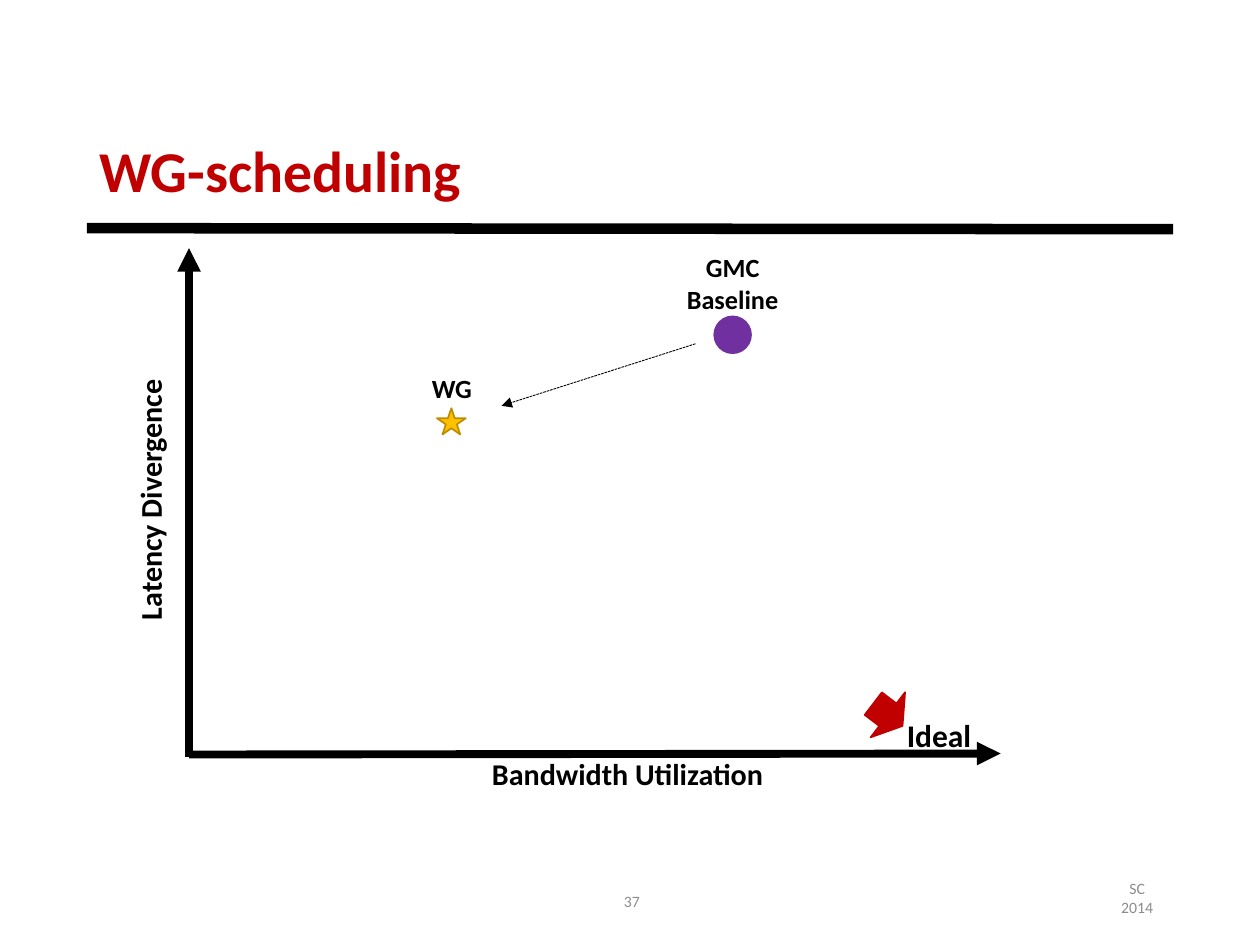
from dataclasses import dataclass

from lxml import etree
from pptx import Presentation
from pptx.dml.color import RGBColor
from pptx.enum.dml import MSO_LINE
from pptx.enum.shapes import MSO_CONNECTOR, MSO_SHAPE
from pptx.enum.text import MSO_ANCHOR, PP_ALIGN
from pptx.oxml.ns import qn
from pptx.util import Cm, Pt

STRAIGHT = MSO_CONNECTOR.STRAIGHT
ARROW, CIRCLE, STAR = MSO_SHAPE.RIGHT_ARROW, MSO_SHAPE.OVAL, MSO_SHAPE.STAR_5_POINT
LEFT, CENTER, RIGHT = PP_ALIGN.LEFT, PP_ALIGN.CENTER, PP_ALIGN.RIGHT
TOP, MIDDLE = MSO_ANCHOR.TOP, MSO_ANCHOR.MIDDLE
DASHED = MSO_LINE.SQUARE_DOT
BLANK_LAYOUT = 6


@dataclass(frozen=True)
class Theme:
    """Font, colours and type sizes of the slide."""
    font: str = "Calibri"
    black: str = "000000"
    red: str = "C00000"
    grey: str = "8C8C8C"
    purple: str = "7030A0"
    gold: str = "FFC000"
    dark_gold: str = "BD8E00"
    title: float = 33
    ideal: float = 18
    axis: float = 17.2
    point: float = 15
    footer: float = 9


THEME = Theme()


def add_text(slide, text, box, size, color=THEME.black, bold=True,
             align=CENTER, anchor=TOP, rotation=0, spacing=1.0):
    """Add a wrapped one-paragraph text box at box, given in centimetres."""
    shape = slide.shapes.add_textbox(*map(Cm, box))
    shape.rotation = rotation
    frame = shape.text_frame
    frame.word_wrap = True
    frame.vertical_anchor = anchor
    paragraph = frame.paragraphs[0]
    paragraph.alignment = align
    paragraph.line_spacing = spacing
    run = paragraph.add_run()
    run.text = text
    run.font.name = THEME.font
    run.font.size = Pt(size)
    run.font.bold = bold
    run.font.color.rgb = RGBColor.from_string(color)


def add_line(slide, start, end, width, arrow=True, dash=None):
    """Add a straight black line, with an arrowhead at its end if wanted."""
    connector = slide.shapes.add_connector(STRAIGHT, *map(Cm, start + end))
    line = connector.line
    line.width = Pt(width)
    line.color.rgb = RGBColor.from_string(THEME.black)
    if dash:
        line.dash_style = dash
    if arrow:
        etree.SubElement(line._get_or_add_ln(), qn("a:tailEnd"), type="triangle")
    etree.SubElement(connector._element.spPr, qn("a:effectLst"))


def add_marker(slide, kind, box, fill, outline, rotation=0):
    """Add a filled and outlined preset shape."""
    shape = slide.shapes.add_shape(kind, *map(Cm, box))
    shape.rotation = rotation
    shape.shadow.inherit = False
    shape.fill.solid()
    shape.fill.fore_color.rgb = RGBColor.from_string(fill)
    shape.line.color.rgb = RGBColor.from_string(outline)
    shape.line.width = Pt(1)


def add_frame(slide):
    """Add the title, its rule and the footer."""
    add_text(slide, "WG-scheduling", (1.75, 2.72, 21.9, 1.57), THEME.title,
             THEME.red, align=LEFT, anchor=MIDDLE, spacing=0.9)
    add_line(slide, (1.75, 4.6), (23.65, 4.62), 6, arrow=False)
    footer = {"color": THEME.grey, "bold": False, "anchor": MIDDLE}
    add_text(slide, "SC 2014", (22.2, 17.58, 1.45, 1.02), THEME.footer, **footer)
    add_text(slide, "37", (12.24, 17.65, 0.91, 1.02), THEME.footer,
             align=RIGHT, **footer)


def add_axes(slide):
    """Add both axes, their labels and the ideal corner."""
    add_line(slide, (3.81, 15.27), (3.81, 5), 4.5)
    add_line(slide, (3.81, 15.21), (20.17, 15.19), 4.5)
    add_text(slide, "Latency Divergence", (0.23, 9.58, 5.59, 0.99), THEME.axis,
             rotation=270)
    add_text(slide, "Ideal", (18.03, 14.3, 2.62, 1.02), THEME.ideal, align=LEFT)
    add_text(slide, "Bandwidth Utilization", (9.4, 15.11, 6.5, 0.99), THEME.axis)
    add_marker(slide, ARROW, (17.53, 13.84, 0.74, 1.14), THEME.red, THEME.red, 37.4)


def add_points(slide):
    """Add the two schedulers and the step between them."""
    add_marker(slide, CIRCLE, (14.4, 6.38, 0.74, 0.74), THEME.purple, THEME.purple)
    add_text(slide, "GMC Baseline", (13.46, 4.95, 2.62, 1.55), THEME.point)
    add_marker(slide, STAR, (8.81, 8.23, 0.58, 0.53), THEME.gold, THEME.dark_gold)
    add_text(slide, "WG", (7.8, 7.39, 2.62, 0.89), THEME.point)
    add_line(slide, (14.02, 6.93), (10.11, 8.18), 0.5, dash=DASHED)


def main():
    """Build and save the slide."""
    presentation = Presentation()
    presentation.slide_width, presentation.slide_height = Cm(25.4), Cm(19.05)
    slide = presentation.slides.add_slide(presentation.slide_layouts[BLANK_LAYOUT])
    add_frame(slide)
    add_axes(slide)
    add_points(slide)
    presentation.save("out.pptx")


if __name__ == "__main__":
    main()
